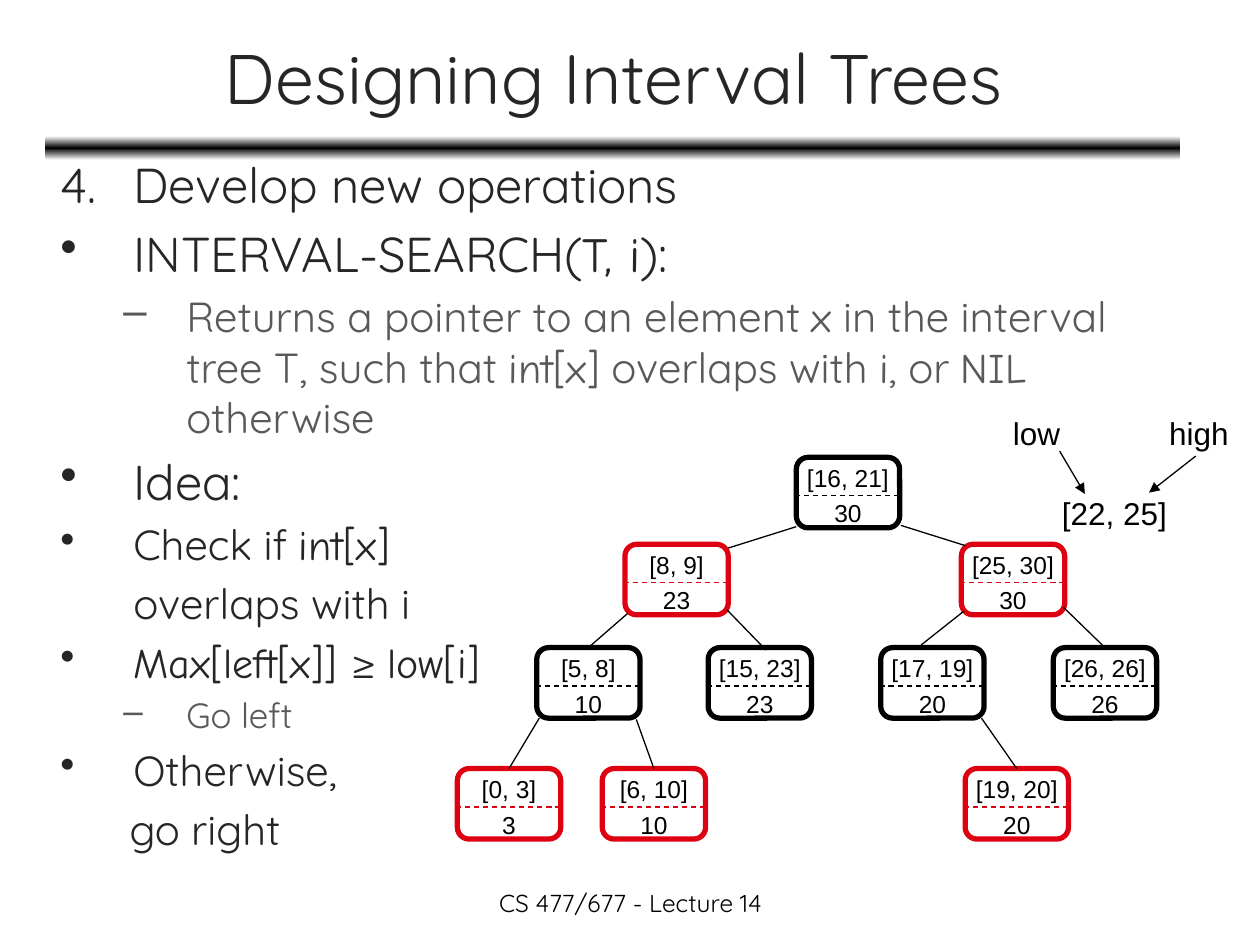
import pptx
import pptx.dml.color
import pptx.enum.dml
import pptx.enum.shapes
import pptx.enum.text
import pptx.oxml
import pptx.oxml.ns
import pptx.util
from pptx.util import Inches

DARK, GREY, BLACK, RED = "262626", "595959", "000000", "DD0111"
SANS, HAND, PLAIN = "Quicksand", "Comic Neue", "Arial"
CENTER = pptx.enum.text.PP_ALIGN.CENTER
MIDDLE = pptx.enum.text.MSO_ANCHOR.MIDDLE
ROUNDED = pptx.enum.shapes.MSO_SHAPE.ROUNDED_RECTANGLE

NODE_WIDTH, NODE_HEIGHT = 0.82, 0.56

# interval, max, left, top, colour
NODES = [
    ("[16, 21]", "30", 6.32, 3.63, BLACK),
    ("[25, 30]", "30", 7.63, 4.32, RED),
    ("[26, 26]", "26", 8.36, 5.14, BLACK),
    ("[17, 19]", "20", 6.99, 5.14, BLACK),
    ("[19, 20]", "20", 7.66, 6.1, RED),
    ("[8, 9]", "23", 4.96, 4.32, RED),
    ("[15, 23]", "23", 5.62, 5.14, BLACK),
    ("[5, 8]", "10", 4.26, 5.14, BLACK),
    ("[6, 10]", "10", 4.78, 6.1, RED),
    ("[0, 3]", "3", 3.63, 6.1, RED),
]

# start point, then an end point or the child whose top is joined
EDGES = [
    ((6.32, 4.18), (5.78, 4.35)),
    ((7.15, 4.17), (7.66, 4.33)),
    ((4.98, 4.87), "[5, 8]"),
    ((5.77, 4.84), (6.08, 5.16)),
    ((7.65, 4.85), (7.31, 5.12)),
    ((8.44, 4.82), "[26, 26]"),
    ((4.28, 5.7), "[0, 3]"),
    ((5.05, 5.71), "[6, 10]"),
    ((7.79, 5.7), "[19, 20]"),
]

# text (parts between bars alternate the two fonts), size, level, bullet, indent
NUMBER = '<a:buAutoNum %s type="arabicPeriod" startAt="4"/>'
DOT = '<a:buChar %s char="•"/>'
DASH = '<a:buChar %s char="–"/>'
NONE = "<a:buNone %s/>"
OUTLINE = [
    ("Develop new operations", 28, 0, NUMBER, 0.58),
    ("INTERVAL-SEARCH(|T, i|):", 28, 0, DOT, 0.58),
    ("Returns a pointer to an element |x| in the interval tree T, such that "
     "|int[x]| overlaps with |i|, or |NIL| otherwise", 24, 1, DASH, 1),
    ("Idea:", 28, 0, DOT, 0.58),
    ("Check if |int[x]", 24, 0, DOT, 0.58),
    ("overlaps with i", 24, 0, NONE, 0.58),
    ("|Max[left[x]] |≥ |low[i]", 24, 0, DOT, 0.58),
    ("Go left", 20, 1, DASH, 1),
    ("Otherwise,", 24, 0, DOT, 0.58),
    ("go right", 24, 0, NONE, 0.55),
]


def rgb(color):
    return pptx.dml.color.RGBColor.from_string(color)


def set_all(target, values):
    for name, value in values.items():
        setattr(target, name, value)


def add_run(paragraph, text, size, font, color):
    run = paragraph.add_run()
    run.text = text
    set_all(run.font, {"size": pptx.util.Pt(size), "name": font})
    run.font.color.rgb = rgb(color)


def add_xml(parent, template):
    parent.append(pptx.oxml.parse_xml(template % pptx.oxml.ns.nsdecls("a")))


def add_line(shapes, start, end, color=BLACK, dashed=False, arrow=False):
    line = shapes.add_connector(pptx.enum.shapes.MSO_CONNECTOR.STRAIGHT,
                                *map(Inches, start + end))
    line.line.width = pptx.util.Pt(0.75)
    line.line.color.rgb = rgb(color)
    if dashed:
        line.line.dash_style = pptx.enum.dml.MSO_LINE.DASH
    if arrow:
        add_xml(line.line._get_or_add_ln(), '<a:tailEnd %s type="triangle"/>')
    add_xml(line._element.spPr, "<a:effectLst %s/>")
    return line


def add_rounded(shapes, left, top, width, height):
    box = shapes.add_shape(ROUNDED, *map(Inches, (left, top, width, height)))
    box.shadow.inherit = False
    return box


def add_label(slide, text, place, size, font, wrap=False, align=None):
    label = slide.shapes.add_textbox(*map(Inches, place))
    label.text_frame.word_wrap = wrap
    if not wrap:
        # Leave spare room so that the label stays on one line
        label.text_frame.margin_right = 0
    paragraph = label.text_frame.paragraphs[0]
    paragraph.alignment = align
    add_run(paragraph, text, size, font, BLACK)


def add_title(slide, text):
    title = slide.shapes.title
    set_all(title, {"left": Inches(0.37), "top": Inches(0.11),
                    "width": Inches(9), "height": Inches(0.99)})
    title.text_frame.vertical_anchor = MIDDLE
    paragraph = title.text_frame.paragraphs[0]
    paragraph.alignment = CENTER
    add_run(paragraph, text, 40, SANS, DARK)


def add_rule(slide):
    rule = add_rounded(slide.shapes, 0.36, 1.08, 9.01, 0.19)
    rule.line.fill.background()
    rule.fill.background()
    stops = "".join(
        f'<a:gs pos="{position}"><a:srgbClr val="{color}"/></a:gs>'
        for position, color in ((0, "FFFFFF"), (50000, BLACK), (100000, "FFFFFF")))
    gradient = pptx.oxml.parse_xml(
        f'<a:gradFill {pptx.oxml.ns.nsdecls("a")}><a:gsLst>{stops}</a:gsLst>'
        '<a:lin ang="5400000" scaled="0"/></a:gradFill>')
    properties = rule._element.spPr
    properties.replace(properties.find(pptx.oxml.ns.qn("a:noFill")), gradient)


def add_outline(slide):
    outline = slide.shapes.add_textbox(*map(Inches, (0.38, 1.18, 8.95, 5.55)))
    frame = outline.text_frame
    frame.word_wrap = True
    for index, (text, size, level, bullet, indent) in enumerate(OUTLINE):
        paragraph = frame.add_paragraph() if index else frame.paragraphs[0]
        set_all(paragraph, {"level": level,
                            "space_before": pptx.util.Pt(0.2 * size)})
        hanging = 0 if bullet is NONE else 0.5 if level else 0.58
        properties = paragraph._p.get_or_add_pPr()
        properties.set("marL", str(Inches(indent)))
        properties.set("indent", str(-Inches(hanging)))
        add_xml(properties, bullet)
        for part, words in enumerate(text.split("|")):
            if words:
                add_run(paragraph, words, size, HAND if part % 2 else SANS,
                        GREY if level else DARK)


def add_node(slide, interval, maximum, left, top, color):
    group = slide.shapes.add_group_shape()
    node = add_rounded(group.shapes, left, top, NODE_WIDTH, NODE_HEIGHT)
    node.fill.background()
    node.line.width = pptx.util.Pt(3)
    node.line.color.rgb = rgb(color)
    frame = node.text_frame
    set_all(frame, {"word_wrap": False, "vertical_anchor": MIDDLE})
    for paragraph, text in ((frame.paragraphs[0], interval),
                            (frame.add_paragraph(), maximum)):
        set_all(paragraph, {"alignment": CENTER, "line_spacing": 1.2})
        add_run(paragraph, text, 14, PLAIN, BLACK)
    divider = top + 0.305
    add_line(group.shapes, (left - 0.01, divider),
             (left + NODE_WIDTH + 0.01, divider), color, dashed=True)
    return node


def main():
    deck = pptx.Presentation()
    set_all(deck, {"slide_width": Inches(10), "slide_height": Inches(7.5)})
    slide = deck.slides.add_slide(deck.slide_layouts[5])

    # Heading and outline
    add_rule(slide)
    add_title(slide, "Designing Interval Trees")
    add_outline(slide)

    # Interval tree
    nodes = {node[0]: add_node(slide, *node) for node in NODES}
    for start, end in EDGES:
        if end in nodes:
            add_line(slide.shapes, start, start).end_connect(nodes[end], 0)
        else:
            add_line(slide.shapes, start, end)

    # Search interval with its two ends named
    add_label(slide, "[22, 25]", (8.33, 3.87, 1.03, 0.4), 18, PLAIN)
    add_label(slide, "high", (9.18, 3.24, 0.67, 0.4), 18, PLAIN)
    add_label(slide, "low", (7.94, 3.24, 0.58, 0.4), 18, PLAIN)
    add_line(slide.shapes, (9.49, 3.62), (9.12, 3.91), arrow=True)
    add_line(slide.shapes, (8.41, 3.58), (8.61, 3.92), arrow=True)

    # Footer
    add_label(slide, "CS 477/677 - Lecture 14", (3.42, 7, 3.17, 0.35), 14, SANS,
              wrap=True, align=CENTER)
    deck.save("out.pptx")


if __name__ == "__main__":
    main()
